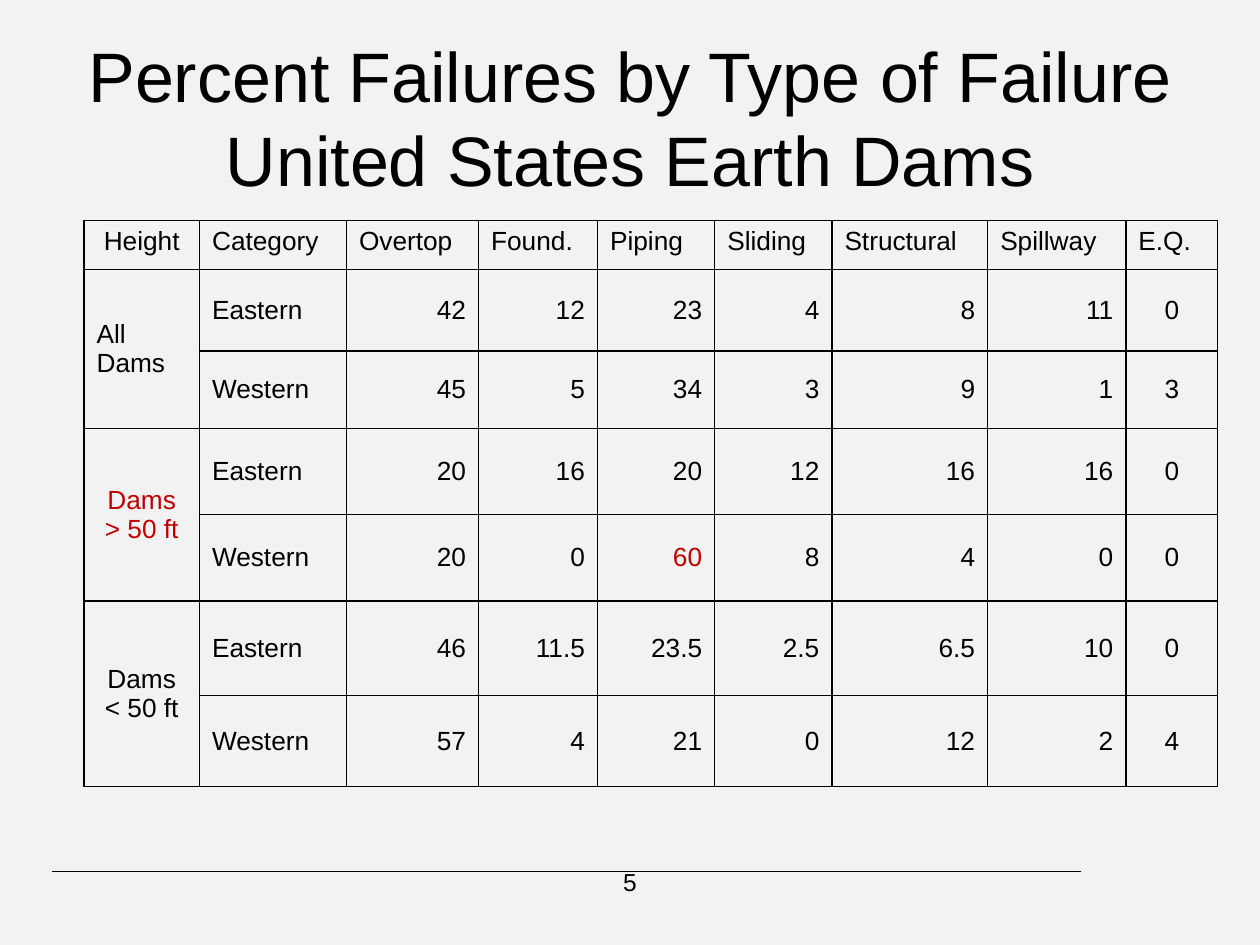
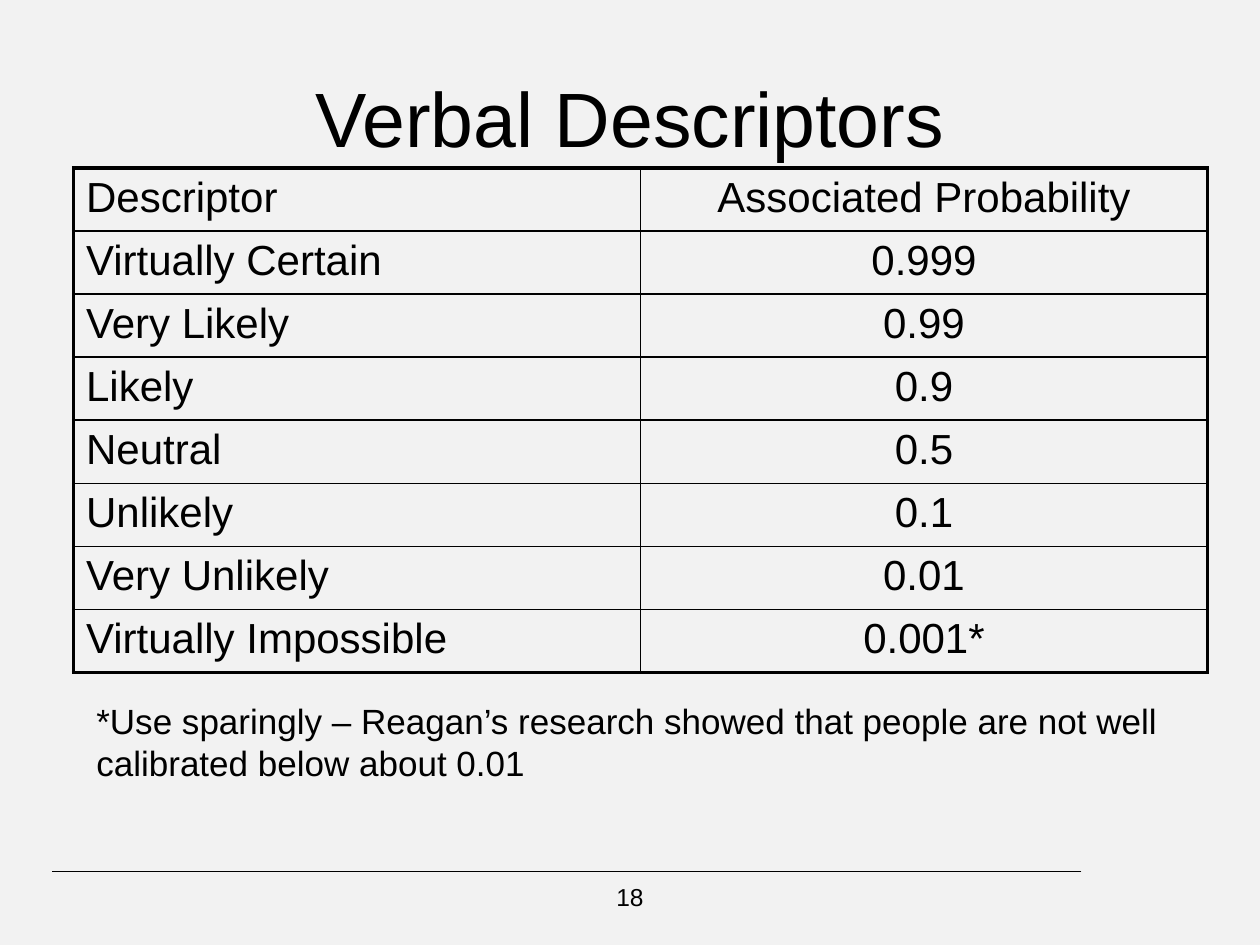
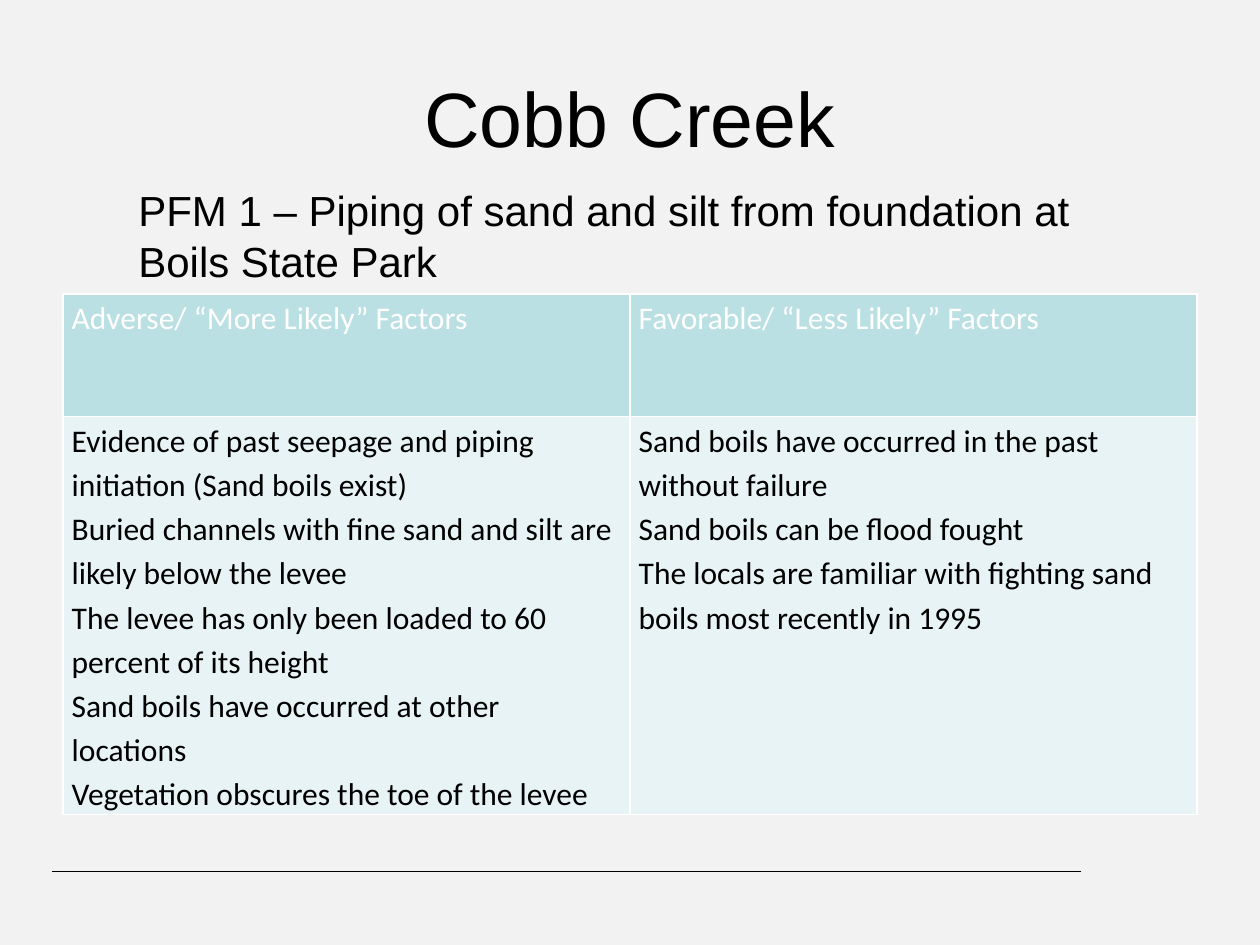
"""Build three slides of tables on dam failures and likelihood."""
from dataclasses import dataclass

from lxml import etree
from pptx import Presentation
from pptx.dml.color import RGBColor
from pptx.enum.shapes import MSO_CONNECTOR
from pptx.enum.text import MSO_ANCHOR, MSO_AUTO_SIZE, PP_ALIGN
from pptx.oxml.ns import qn
from pptx.slide import Slide
from pptx.table import Table, _Cell
from pptx.text.text import TextFrame
from pptx.util import Pt

STRAIGHT = MSO_CONNECTOR.STRAIGHT
TOP, MIDDLE = MSO_ANCHOR.TOP, MSO_ANCHOR.MIDDLE
FIXED = MSO_AUTO_SIZE.NONE
ALIGN = {"l": PP_ALIGN.LEFT, "c": PP_ALIGN.CENTER, "r": PP_ALIGN.RIGHT}
BLACK, WHITE, RED = "000000", "FFFFFF", "C00000"
PAPER, TEAL, PALE = "F2F2F2", "BBE0E3", "E7F3F4"


@dataclass
class Style:
    """Look of the text in a box or cell."""
    size: float
    font: str = "Arial"
    color: str = BLACK
    align: str = "l"
    spacing: float | None = None


@dataclass
class Box:
    """Place of a text box."""
    left: float
    top: float
    width: float
    height: float


@dataclass
class Grid:
    """Place, contents and look of a table."""
    left: float
    top: float
    cols: list[float]
    rows: list[float]
    data: list[list[str]]
    size: float
    head: str
    body: str
    font: str = "Arial"
    spacing: float | None = None
    anchor: MSO_ANCHOR = TOP
    ink: str = BLACK
    fills: tuple[str, str] | None = None
    edge: str = BLACK
    outer: float = 1
    inner: float = 1
    inset: tuple[float, float] = (7.2, 3.6)


HEIGHTS = [
    ["Height", "Category", "Overtop", "Found.", "Piping", "Sliding",
     "Structural", "Spillway", "E.Q."],
    ["All Dams", "Eastern", "42", "12", "23", "4", "8", "11", "0"],
    ["", "Western", "45", "5", "34", "3", "9", "1", "3"],
    ["Dams\n> 50 ft", "Eastern", "20", "16", "20", "12", "16", "16", "0"],
    ["", "Western", "20", "0", "60", "8", "4", "0", "0"],
    ["Dams\n< 50 ft", "Eastern", "46", "11.5", "23.5", "2.5", "6.5", "10", "0"],
    ["", "Western", "57", "4", "21", "0", "12", "2", "4"],
]
ODDS = [
    ["Descriptor", "Associated Probability"],
    ["Virtually Certain", "0.999"],
    ["Very Likely", "0.99"],
    ["Likely", "0.9"],
    ["Neutral", "0.5"],
    ["Unlikely", "0.1"],
    ["Very Unlikely", "0.01"],
    ["Virtually Impossible", "0.001*"],
]
ADVERSE = [
    "Evidence of past seepage and piping initiation (Sand boils exist)",
    "Buried channels with fine sand and silt are likely below the levee",
    "The levee has only been loaded to 60 percent of its height",
    "Sand boils have occurred at other locations",
    "Vegetation obscures the toe of the levee",
]
GOOD = [
    "Sand boils have occurred in the past without failure",
    "Sand boils can be flood fought",
    "The locals are familiar with fighting sand boils most recently in 1995",
]
FACTORS = [
    ["Adverse/ “More Likely” Factors", "Favorable/ “Less Likely” Factors"],
    ["\n".join(ADVERSE), "\n".join(GOOD)],
]


def rgb(code: str) -> RGBColor:
    """Turn a hex string into a colour."""
    return RGBColor.from_string(code)


def write(frame: TextFrame, text: str, style: Style) -> None:
    """Fill a text frame and style its paragraphs."""
    frame.text = text
    for para in frame.paragraphs:
        para.alignment = ALIGN[style.align]
        if style.spacing:
            para.line_spacing = style.spacing
        para.font.size = Pt(style.size)
        para.font.name = style.font
        para.font.bold = False
        para.font.color.rgb = rgb(style.color)


def add_text(slide: Slide, box: Box, text: str, style: Style) -> None:
    """Add a wrapping text box."""
    shape = slide.shapes.add_textbox(
        Pt(box.left), Pt(box.top), Pt(box.width), Pt(box.height))
    shape.text_frame.word_wrap = True
    write(shape.text_frame, text, style)


def add_edges(cell: _Cell, color: str, widths: dict[str, float]) -> None:
    """Draw the four borders of a cell."""
    props = cell._tc.get_or_add_tcPr()
    for place, (side, width) in enumerate(widths.items()):
        line = etree.Element(qn(f"a:ln{side}"), w=str(Pt(width)))
        fill = etree.SubElement(line, qn("a:solidFill"))
        etree.SubElement(fill, qn("a:srgbClr"), val=color)
        props.insert(place, line)


def add_grid(slide: Slide, grid: Grid) -> Table:
    """Add a table with its text, fills and borders."""
    rows, cols = len(grid.rows), len(grid.cols)
    table = slide.shapes.add_table(
        rows, cols, Pt(grid.left), Pt(grid.top),
        Pt(sum(grid.cols)), Pt(sum(grid.rows))).table
    table.first_row = table.horz_banding = False
    for col, width in zip(table.columns, grid.cols):
        col.width = Pt(width)
    for row, height in zip(table.rows, grid.rows):
        row.height = Pt(height)
    for r, line in enumerate(grid.data):
        aligns = grid.body if r else grid.head
        for c, text in enumerate(line):
            cell = table.cell(r, c)
            cell.margin_left = cell.margin_right = Pt(grid.inset[0])
            cell.margin_top = cell.margin_bottom = Pt(grid.inset[1])
            cell.vertical_anchor = grid.anchor if r else TOP
            color = grid.ink if r == 0 else BLACK
            write(cell.text_frame, text,
                  Style(grid.size, grid.font, color, aligns[c], grid.spacing))
            if grid.fills:
                cell.fill.solid()
                cell.fill.fore_color.rgb = rgb(grid.fills[min(r, 1)])
            else:
                cell.fill.background()
            ends = {"L": c == 0, "R": c == cols - 1,
                    "T": r == 0, "B": r == rows - 1}
            add_edges(cell, grid.edge, {
                side: grid.outer if end else grid.inner
                for side, end in ends.items()})
    return table


def add_slide(deck: Presentation, title: str, size: float) -> Slide:
    """Add a slide with its title and footer rule."""
    slide = deck.slides.add_slide(deck.slide_layouts[5])
    head = slide.shapes.title
    head.left, head.top, head.width, head.height = Pt(36), Pt(21.6), Pt(648), Pt(90)
    frame = head.text_frame
    frame.auto_size = FIXED
    frame.vertical_anchor = MIDDLE
    write(frame, title, Style(size, align="c"))
    rule = slide.shapes.add_connector(STRAIGHT, Pt(618), Pt(498), Pt(30), Pt(498))
    rule.line.color.rgb = rgb(BLACK)
    rule.line.width = Pt(0.75)
    etree.SubElement(rule._element.spPr, qn("a:effectLst"))
    return slide


def add_page(slide: Slide, number: int, top: float) -> None:
    """Add the page number."""
    add_text(slide, Box(246, top, 228, 29), str(number), Style(14, align="c"))


def add_heights(deck: Presentation) -> None:
    """Add the slide on failures by height."""
    slide = add_slide(
        deck, "Percent Failures by Type of Failure\vUnited States Earth Dams", 40)
    add_page(slide, 5, 492)
    table = add_grid(slide, Grid(
        48, 126, [66, 84, 75.5, 68, 67, 67, 89, 79, 52.5],
        [28, 46.5, 44.5, 49, 49.5, 54, 52], HEIGHTS, 15,
        head="cllllllll", body="clrrrrrrc", anchor=MIDDLE))
    for row in range(1, len(HEIGHTS), 2):
        table.cell(row, 0).merge(table.cell(row + 1, 0))
    table.cell(1, 0).text_frame.paragraphs[0].alignment = ALIGN["l"]
    for row, col in ((3, 0), (4, 4)):
        for para in table.cell(row, col).text_frame.paragraphs:
            para.font.color.rgb = rgb(RED)


def add_odds(deck: Presentation) -> None:
    """Add the slide on verbal descriptors."""
    slide = add_slide(deck, "Verbal Descriptors", 44)
    add_page(slide, 18, 500.4)
    add_grid(slide, Grid(
        42, 96, [324] * 2, [36] * len(ODDS), ODDS, 24,
        head="lc", body="lc", outer=2.25))
    add_text(slide, Box(48, 396, 642, 55.5),
             "*Use sparingly – Reagan’s research showed that people are not "
             "well calibrated below about 0.01", Style(20))


def add_factors(deck: Presentation) -> None:
    """Add the slide on adverse and favorable factors."""
    slide = add_slide(deck, "Cobb Creek", 44)
    add_grid(slide, Grid(
        36, 168, [324] * 2, [70, 182], FACTORS, 18, head="ll", body="ll",
        font="Calibri", spacing=1.15, ink=WHITE, fills=(TEAL, PALE),
        edge=WHITE, inset=(5, 0)))
    add_text(slide, Box(72, 102, 582, 65.5),
             "PFM 1 – Piping of sand and silt from foundation at "
             "Boils State Park", Style(24))


def main() -> None:
    """Build and save the deck."""
    deck = Presentation()
    deck.slide_width, deck.slide_height = Pt(720), Pt(540)
    paper = deck.slide_master.background.fill
    paper.solid()
    paper.fore_color.rgb = rgb(PAPER)
    add_heights(deck)
    add_odds(deck)
    add_factors(deck)
    deck.save("out.pptx")


if __name__ == "__main__":
    main()
